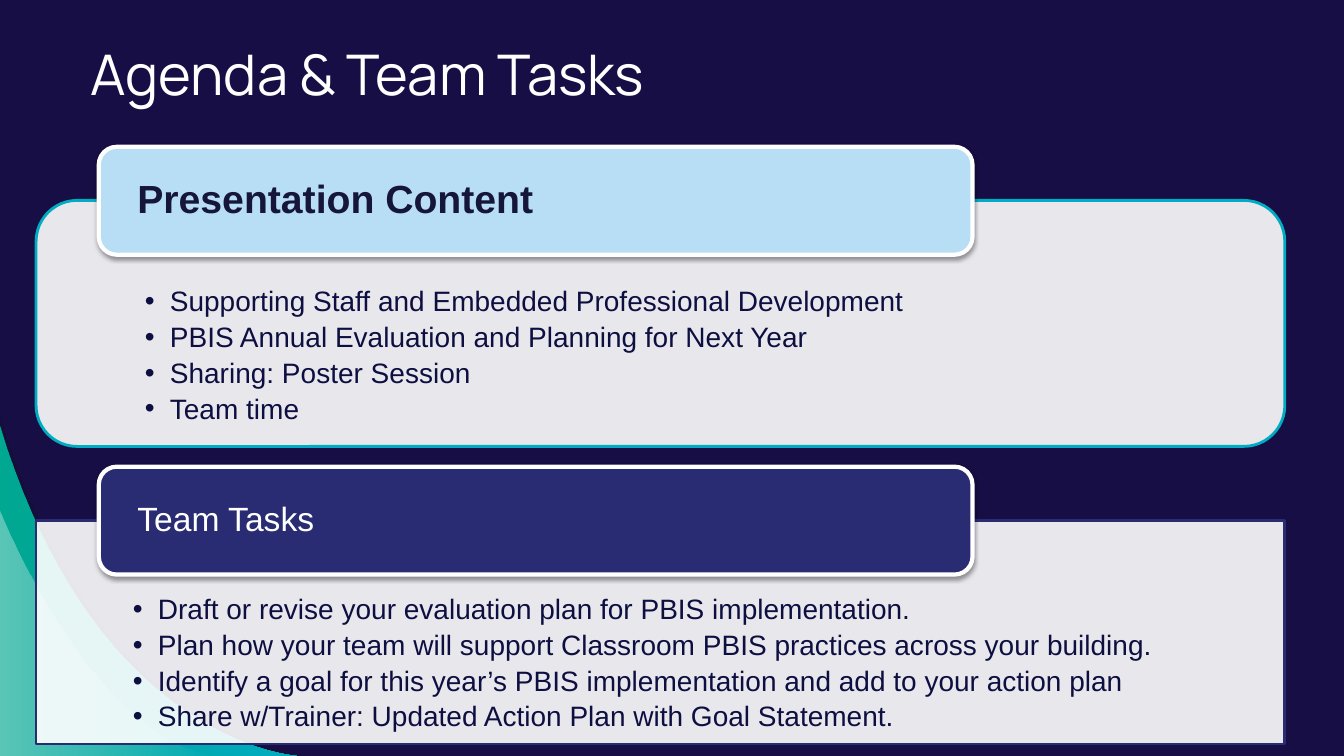
import pptx
import pptx.dml.color
import pptx.enum.dml
import pptx.enum.shapes
import pptx.enum.text
import pptx.oxml
import pptx.oxml.ns
import pptx.util
from lxml import etree

Cm, Pt = pptx.util.Cm, pptx.util.Pt
Shapes = pptx.enum.shapes.MSO_SHAPE
Anchor = pptx.enum.text.MSO_ANCHOR

COLOURS = {
    "night": "160E44", "shade": "12102F", "cyan": "00ACC2", "green": "00A791",
    "white": "FFFFFF", "black": "000000", "sky": "B7DEF4", "indigo": "292C73",
    "ink": "0D0F41", "heading ink": "15163A",
}
PAGE_WIDTH, PAGE_HEIGHT = 33.87, 19.05
CARD_LEFT, CARD_WIDTH = 0.91, 31.47
HEADING_LEFT, HEADING_WIDTH, HEADING_HEIGHT = 2.49, 22.02, 2.72
HEADING_RISE = 1.35
CURVE_STEPS = 40


def colour(name):
    return pptx.dml.color.RGBColor.from_string(COLOURS[name])


def add_child(parent, tag, **attributes):
    child = etree.SubElement(parent, pptx.oxml.ns.qn(tag))
    for key, value in attributes.items():
        child.set(key, str(value))
    return child


def set_opacity(element, percent):
    """Give every colour inside the element the same opacity."""
    for shade in element.iter(pptx.oxml.ns.qn("a:srgbClr")):
        add_child(shade, "a:alpha", val=percent * 1000)


def fill_solid(shape, name, opacity=100):
    shape.fill.solid()
    shape.fill.fore_color.rgb = colour(name)
    if opacity < 100:
        set_opacity(shape.fill._xPr.find(pptx.oxml.ns.qn("a:solidFill")), opacity)


def fill_gradient(shape, names, opacities=(100, 100)):
    shape.fill.gradient()
    shape.fill.gradient_angle = 0
    for stop, name, opacity in zip(shape.fill.gradient_stops, names, opacities):
        stop.color.rgb = colour(name)
        set_opacity(stop._gs, opacity)


def add_wave(page, *controls):
    """Fill the bottom left corner below a cubic curve through four control points."""
    def curve_point(t):
        weights = ((1 - t) ** 3, 3 * t * (1 - t) ** 2, 3 * t * t * (1 - t), t ** 3)
        return tuple(Cm(sum(w * c[axis] for w, c in zip(weights, controls)))
                     for axis in (0, 1))

    points = [curve_point(step / CURVE_STEPS) for step in range(CURVE_STEPS + 1)]
    builder = page.shapes.build_freeform(*points[0])
    builder.add_line_segments(points[1:] + [(0, Cm(PAGE_HEIGHT))], close=True)
    wave = builder.convert_to_shape()
    wave.shadow.inherit = False
    wave.line.fill.background()
    return wave


def add_panel(page, kind, left, top, width, height, line, line_width):
    panel = page.shapes.add_shape(kind, Cm(left), Cm(top), Cm(width), Cm(height))
    panel.shadow.inherit = False
    panel.line.color.rgb = colour(line)
    panel.line.width = Pt(line_width)
    return panel


def set_frame(box, anchor, left, top, right, bottom):
    frame = box.text_frame
    frame.word_wrap = True
    frame.vertical_anchor = anchor
    frame.margin_left, frame.margin_top = Cm(left), Cm(top)
    frame.margin_right, frame.margin_bottom = Cm(right), Cm(bottom)
    return frame


def add_span(para, words, size, name, font="Arial", bold=False):
    para.alignment = pptx.enum.text.PP_ALIGN.LEFT
    span = para.add_run()
    span.text = words
    span.font.name, span.font.size, span.font.bold = font, Pt(size), bold
    span.font.color.rgb = colour(name)


def add_title(page, words):
    box = page.shapes.add_textbox(Cm(2.03), Cm(0.66), Cm(26.06), Cm(2.34))
    frame = set_frame(box, Anchor.MIDDLE, 0.25, 0.25, 0.25, 0.25)
    add_span(frame.paragraphs[0], words, 40, "white", "Manrope")


def add_card(page, kind, top, height, line, items):
    card = add_panel(page, kind, CARD_LEFT, top, CARD_WIDTH, height, line, 2)
    fill_solid(card, "white", 90)
    frame = set_frame(card, Anchor.TOP, 2.44, 1.9, 2.44, 0.41)
    for number, item in enumerate(items):
        para = frame.add_paragraph() if number else frame.paragraphs[0]
        properties = para._p.get_or_add_pPr()
        properties.set("marL", str(Cm(0.63)))
        properties.set("indent", str(-Cm(0.63)))
        add_child(properties, "a:buFont", typeface="Arial")
        add_child(properties, "a:buChar", char="•")
        para.line_spacing = 0.9
        para.space_after = Pt(3.9)
        add_span(para, item, 20, "ink")


def add_heading(page, card_top, fill, words, size, name, bold=False):
    heading = add_panel(page, Shapes.ROUNDED_RECTANGLE, HEADING_LEFT,
                        card_top - HEADING_RISE, HEADING_WIDTH, HEADING_HEIGHT,
                        "white", 3)
    fill_solid(heading, fill)
    effects = heading._element.spPr.find(pptx.oxml.ns.qn("a:effectLst"))
    shadow = add_child(effects, "a:outerShdw", blurRad=Pt(3.1), dist=Pt(1.6),
                       dir=90 * 60000, rotWithShape=0)
    add_child(shadow, "a:srgbClr", val=COLOURS["black"])
    set_opacity(shadow, 38)
    para = set_frame(heading, Anchor.MIDDLE, 0.84, 0, 0.84, 0).paragraphs[0]
    para.line_spacing = 0.9
    add_span(para, words, size, name, bold=bold)


def main():
    deck = pptx.Presentation()
    deck.slide_width, deck.slide_height = Cm(PAGE_WIDTH), Cm(PAGE_HEIGHT)
    page = deck.slides.add_slide(deck.slide_layouts[6])
    page.background.fill.solid()
    page.background.fill.fore_color.rgb = colour("night")

    rim = add_wave(page, (0, 10.49), (2.49, 18.77), (7.7, 19.05), (7.7, 19.05))
    fill_solid(rim, "shade", 54)
    body = add_wave(page, (0, 10.72), (2.41, 18.77), (7.49, 19.05), (7.49, 19.05))
    fill_gradient(body, ("green", "cyan"))
    gleam = add_wave(page, (0, 12.85), (0, 12.85), (2.31, 18.67), (5.49, 19.05))
    fill_gradient(gleam, ("white", "white"), (36, 0))

    content_top, tasks_top = 5.05, 13.11
    add_card(page, Shapes.ROUNDED_RECTANGLE, content_top, 6.2, "cyan", [
        "Supporting Staff and Embedded Professional Development",
        "PBIS Annual Evaluation and Planning for Next Year",
        "Sharing: Poster Session",
        "Team time",
    ])
    add_heading(page, content_top, "sky", "Presentation Content", 28, "heading ink", True)
    add_card(page, Shapes.RECTANGLE, tasks_top, 5.64, "indigo", [
        "Draft or revise your evaluation plan for PBIS implementation.",
        "Plan how your team will support Classroom PBIS practices across your building.",
        "Identify a goal for this year’s PBIS implementation and add to your action plan",
        "Share w/Trainer: Updated Action Plan with Goal Statement.",
    ])
    add_heading(page, tasks_top, "indigo", "Team Tasks", 24, "white")
    add_title(page, "Agenda & Team Tasks")
    deck.save("out.pptx")


if __name__ == "__main__":
    main()
